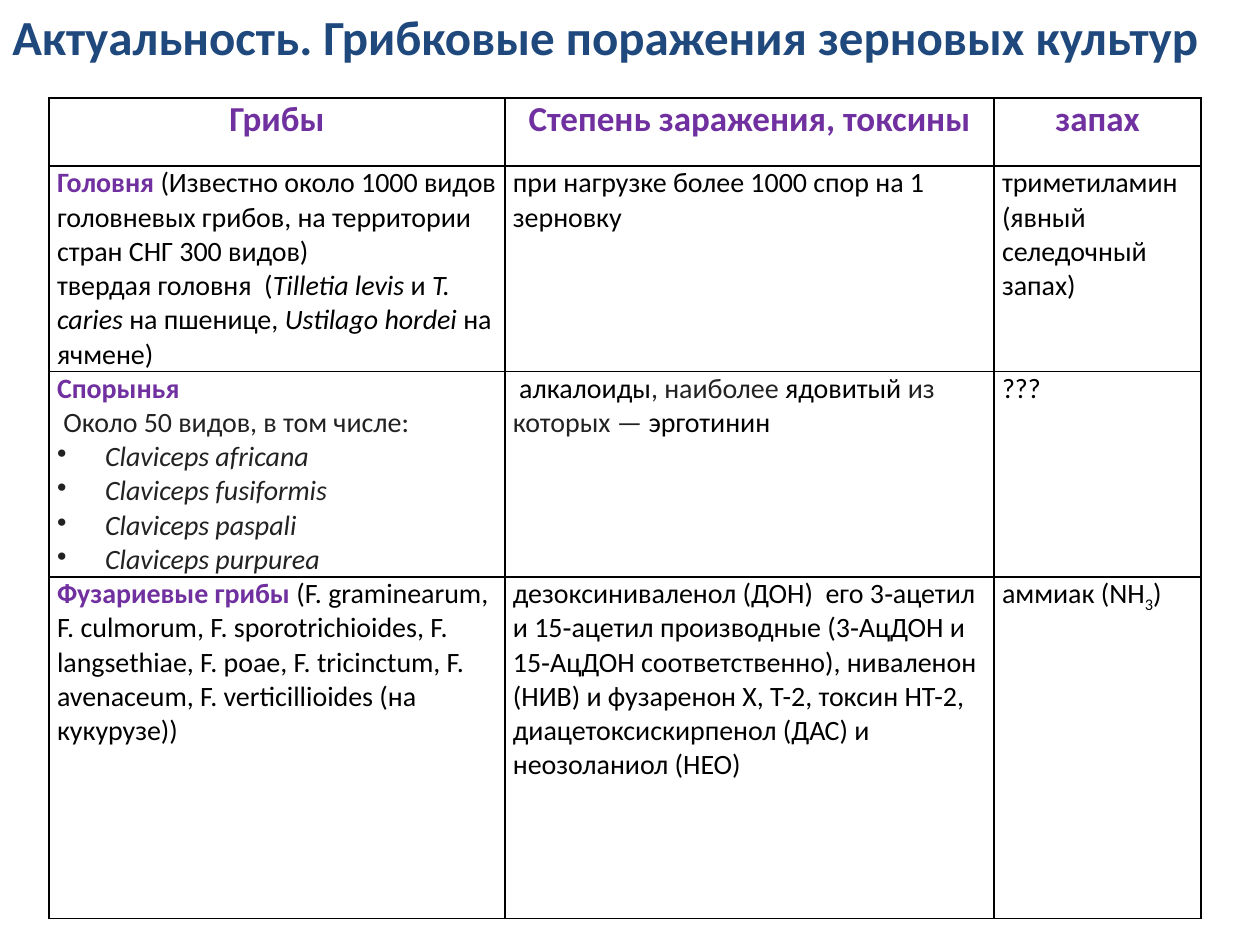
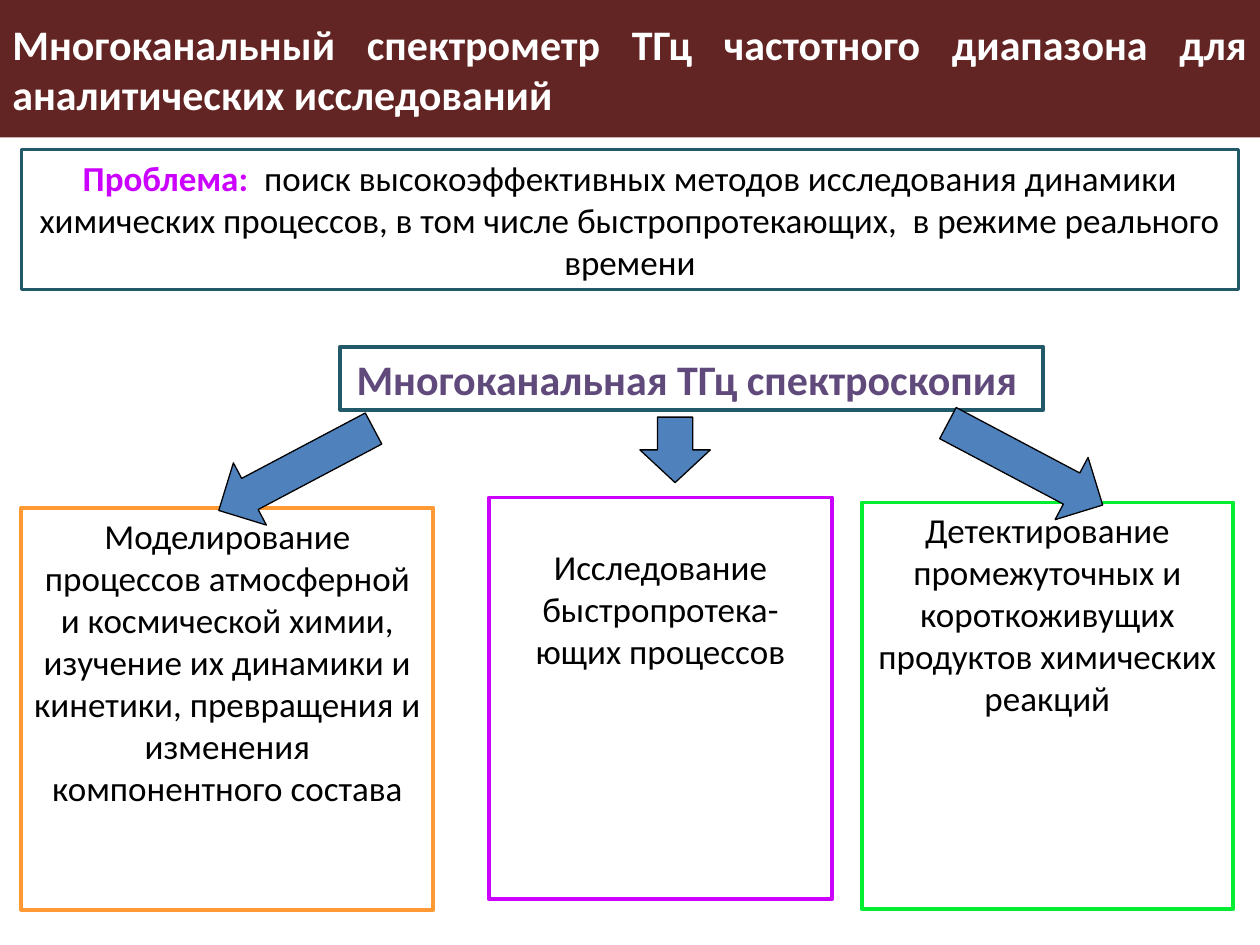
from dataclasses import dataclass
from typing import NamedTuple

from lxml.etree import SubElement
from pptx import Presentation
from pptx.dml.color import RGBColor
from pptx.enum.shapes import MSO_SHAPE
from pptx.enum.text import MSO_ANCHOR, MSO_AUTO_SIZE, PP_ALIGN
from pptx.oxml import parse_xml
from pptx.oxml.ns import nsdecls, qn
from pptx.util import Cm, Pt

FONT = "Calibri"
COLORS = {
    "black": "000000",
    "white": "FFFFFF",
    "navy": "1F497D",
    "purple": "7030A0",
    "graphite": "222222",
    "maroon": "632523",
    "teal": "215968",
    "magenta": "CC00FF",
    "violet": "604A7B",
    "orange": "FF9933",
    "green": "05ED31",
    "blue": "4F81BD",
}
ITALIC = {"italic": True}
BOLD = {"bold": True}


class Run(NamedTuple):
    text: str
    color: str = "black"
    fmt: dict = {}
    baseline: int = 0


class Para(NamedTuple):
    runs: list[Run]
    align: PP_ALIGN = PP_ALIGN.LEFT
    bullet: bool = False


@dataclass
class Box:
    left: float
    top: float
    width: float
    height: float
    para: Para
    size: int = 20
    fill: str | None = None
    line: str | None = None
    weight: float = 2.25
    margin_top: float = 0.13
    wrap: bool = True
    anchor: MSO_ANCHOR = MSO_ANCHOR.TOP
    auto_size: MSO_AUTO_SIZE = MSO_AUTO_SIZE.NONE


@dataclass
class Arrow:
    left: float
    top: float
    height: float
    rotation: float = 0
    width: float = 1.42


def rgb(name: str) -> RGBColor:
    return RGBColor.from_string(COLORS[name])


def centered(*runs: Run) -> Para:
    return Para(list(runs), PP_ALIGN.CENTER)


def plain(text: str) -> list[Para]:
    return [Para([Run(text)])]


def write(tf, paras: list[Para], size: int) -> None:
    for i, para in enumerate(paras):
        p = tf.add_paragraph() if i else tf.paragraphs[0]
        p.alignment = para.align
        if para.bullet:
            pPr = p._p.get_or_add_pPr()
            pPr.set("marL", str(Cm(0.97)))
            pPr.set("indent", str(-Cm(0.97)))
            SubElement(pPr, qn("a:buChar")).set("char", "•")
        for run in para.runs:
            r = p.add_run()
            r.text = run.text
            for name, value in {"name": FONT, "size": Pt(size), **run.fmt}.items():
                setattr(r.font, name, value)
            r.font.color.rgb = rgb(run.color)
            if run.baseline:
                r._r.get_or_add_rPr().set("baseline", str(run.baseline))


def paint(sp, fill: str | None, line: str | None, weight: float) -> None:
    sp.shadow.inherit = False
    if fill:
        sp.fill.solid()
        sp.fill.fore_color.rgb = rgb(fill)
    else:
        sp.fill.background()
    if line:
        sp.line.color.rgb = rgb(line)
        sp.line.width = Pt(weight)
    else:
        sp.line.fill.background()


def add_box(s, box: Box) -> None:
    sp = s.shapes.add_shape(
        MSO_SHAPE.RECTANGLE, Cm(box.left), Cm(box.top), Cm(box.width), Cm(box.height)
    )
    paint(sp, box.fill, box.line, box.weight)
    tf = sp.text_frame
    frame = {
        "word_wrap": box.wrap,
        "auto_size": box.auto_size,
        "vertical_anchor": box.anchor,
        "margin_top": Cm(box.margin_top),
    }
    for name, value in frame.items():
        setattr(tf, name, value)
    write(tf, [box.para], box.size)


def add_arrow(s, arrow: Arrow) -> None:
    sp = s.shapes.add_shape(
        MSO_SHAPE.DOWN_ARROW,
        Cm(arrow.left), Cm(arrow.top), Cm(arrow.width), Cm(arrow.height),
    )
    sp.rotation = arrow.rotation
    paint(sp, "blue", "black", 0.75)


def style_cell(cell) -> None:
    margins = {"left": 0.16, "top": 0, "right": 0.16, "bottom": 0}
    for side, value in margins.items():
        setattr(cell, f"margin_{side}", Cm(value))
    cell.fill.background()
    tcPr = cell._tc.get_or_add_tcPr()
    for i, side in enumerate("LRTB"):
        border = parse_xml(
            f'<a:ln{side} {nsdecls("a")} w="{Pt(1)}"><a:solidFill>'
            f'<a:srgbClr val="{COLORS["black"]}"/></a:solidFill></a:ln{side}>'
        )
        tcPr.insert(i, border)


HEADINGS = ["Грибы", "Степень заражения, токсины", "запах"]
ERGOT_SPECIES = ["africana", "fusiformis", "paspali", "purpurea"]
FUNGI = [
    [
        [
            Para([
                Run("Головня", "purple", BOLD),
                Run(" (Известно около 1000 видов головневых грибов, "
                    "на территории стран СНГ 300 видов)"),
            ]),
            Para([
                Run("твердая головня  ("),
                Run("Tilletia levis", fmt=ITALIC),
                Run(" и "),
                Run("T. caries", fmt=ITALIC),
                Run(" на пшенице, "),
                Run("Ustilago hordei", fmt=ITALIC),
                Run(" на ячмене)"),
            ]),
        ],
        plain("при нагрузке более 1000 спор на 1 зерновку"),
        plain("триметиламин (явный селедочный запах)"),
    ],
    [
        [
            Para([Run("Спорынья", "purple", BOLD)]),
            Para([Run(" Около 50 видов, в том числе:", "graphite")]),
            *[
                Para([Run(f"Claviceps {name}", "graphite", ITALIC)], bullet=True)
                for name in ERGOT_SPECIES
            ],
        ],
        [
            Para([
                Run(" алкалоиды"),
                Run(", наиболее ", "graphite"),
                Run("ядовитый "),
                Run("из которых — ", "graphite"),
                Run("эрготинин"),
            ])
        ],
        plain("???"),
    ],
    [
        [
            Para([
                Run("Фузариевые грибы ", "purple", BOLD),
                Run("(F. graminearum, F. culmorum, F. sporotrichioides, "
                    "F. langsethiae, F. poae, F. tricinctum, F. avenaceum, "
                    "F. verticillioides (на кукурузе))"),
            ])
        ],
        plain("дезоксиниваленол (ДОН)  его 3‑ацетил и 15‑ацетил производные "
              "(3‑АцДОН и 15‑АцДОН соответственно), ниваленон (НИВ) и фузаренон Х, "
              "Т-2, токсин НТ-2, диацетоксискирпенол (ДАС) и неозоланиол (НЕО)"),
        [Para([Run("аммиак (NH"), Run("3", baseline=-25000), Run(")")])],
    ],
]
COLUMN_WIDTHS = [9.19, 9.86, 4.17]
ROW_HEIGHTS = [1.37, 3.94, 4.09, 6.88]

FUNGI_TITLE = Box(
    0, 0, 25.43, 1.45,
    Para([Run("Актуальность. Грибковые поражения зерновых культур", "navy", BOLD)]),
    size=28, wrap=False, auto_size=MSO_AUTO_SIZE.SHAPE_TO_FIT_TEXT,
)

SPECTROMETER_BOXES = [
    Box(
        0.43, 3.02, 24.54, 2.82,
        centered(
            Run("Проблема:  ", "magenta", BOLD),
            Run("поиск высокоэффективных методов исследования динамики химических "
                "процессов, в том числе быстропротекающих,  в режиме реального времени"),
        ),
        line="teal", weight=1.5, auto_size=MSO_AUTO_SIZE.SHAPE_TO_FIT_TEXT,
    ),
    Box(
        6.86, 6.99, 14.17, 1.27,
        centered(Run("Многоканальная ТГц спектроскопия ", "violet", BOLD)),
        size=24, line="teal", wrap=False, auto_size=MSO_AUTO_SIZE.SHAPE_TO_FIT_TEXT,
    ),
    Box(
        0.43, 10.24, 8.31, 8.1,
        centered(Run("Моделирование процессов атмосферной и космической химии, "
                     "изучение их динамики и кинетики, превращения и изменения "
                     "компонентного состава")),
        line="orange",
    ),
    Box(
        9.86, 10.03, 6.91, 8.1,
        centered(Run("Исследование быстропротека-ющих процессов")),
        line="magenta", margin_top=0.97,
    ),
    Box(
        17.37, 10.13, 7.49, 8.2,
        centered(Run("Детектирование промежуточных и короткоживущих продуктов "
                     "химических реакций")),
        line="green",
    ),
    Box(
        0, 0, 25.4, 2.77,
        Para(
            [Run("Многоканальный спектрометр ТГц частотного диапазона для "
                 "аналитических исследований", "white", BOLD)],
            PP_ALIGN.JUSTIFY,
        ),
        size=24, fill="maroon", anchor=MSO_ANCHOR.MIDDLE,
    ),
]
ARROWS = [
    Arrow(12.9, 8.41, 1.32),
    Arrow(5.26, 7.7, 3.53, 62.1),
    Arrow(19.96, 7.59, 3.53, -62.1),
]


def build_fungi(s) -> None:
    table = s.shapes.add_table(
        len(ROW_HEIGHTS), len(COLUMN_WIDTHS), Cm(0.99), Cm(1.98),
        Cm(sum(COLUMN_WIDTHS)), Cm(sum(ROW_HEIGHTS)),
    ).table
    table.first_row = table.horz_banding = False
    for column, width in zip(table.columns, COLUMN_WIDTHS):
        column.width = Cm(width)
    header = [[centered(Run(text, "purple", BOLD))] for text in HEADINGS]
    for i, (height, contents) in enumerate(zip(ROW_HEIGHTS, [header, *FUNGI])):
        table.rows[i].height = Cm(height)
        for cell, paras in zip(table.rows[i].cells, contents):
            style_cell(cell)
            write(cell.text_frame, paras, 16 if i else 20)
    add_box(s, FUNGI_TITLE)


def build_spectrometer(s) -> None:
    for box in SPECTROMETER_BOXES:
        add_box(s, box)
    for arrow in ARROWS:
        add_arrow(s, arrow)


def main() -> None:
    prs = Presentation()
    prs.slide_width, prs.slide_height = Cm(25.4), Cm(19.05)
    for build in (build_fungi, build_spectrometer):
        build(prs.slides.add_slide(prs.slide_layouts[6]))
    prs.save("out.pptx")


if __name__ == "__main__":
    main()
